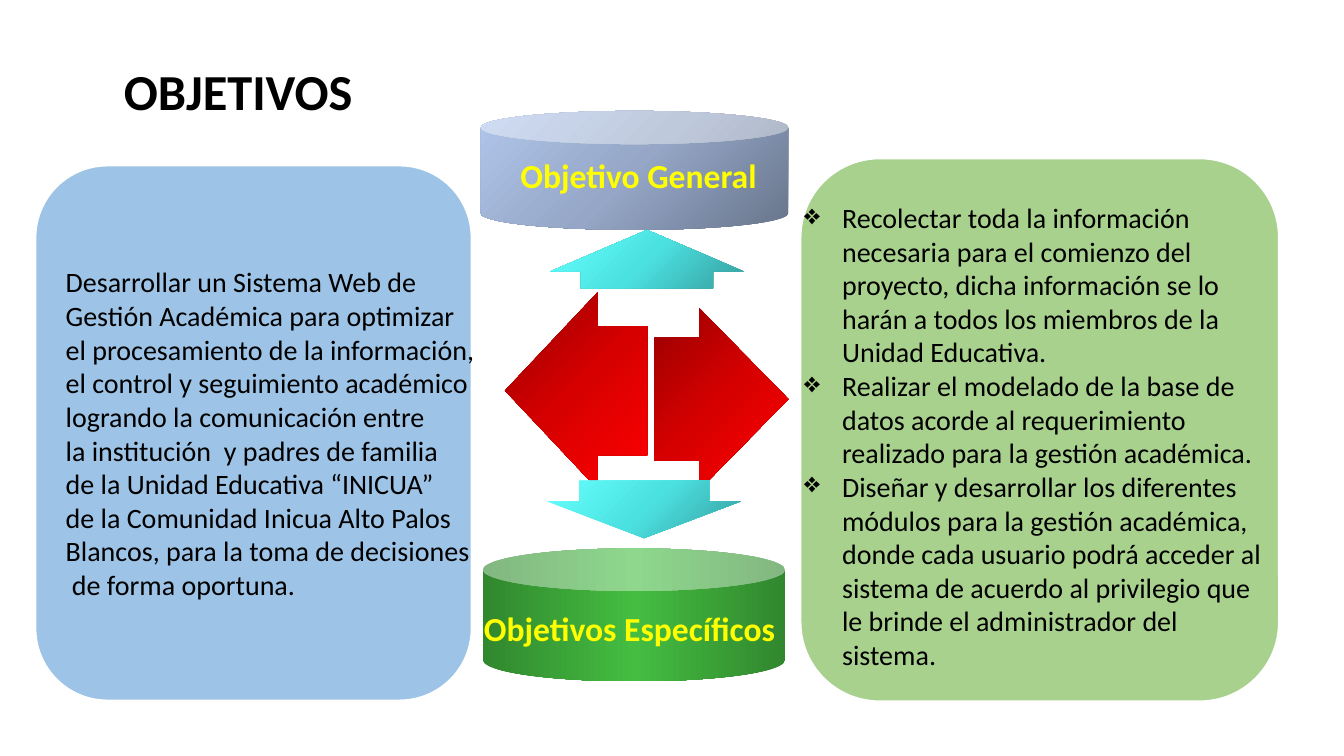
from lxml import etree
from pptx import Presentation
from pptx import util as u
from pptx.dml.color import RGBColor
from pptx.enum import shapes, text
from pptx.oxml.ns import qn

FONT = "Calibri"
COLORS = {"blue": "9DC3E6", "green": "A9D18E", "white": "FFFFFF",
          "black": "000000", "yellow": "FFFF00"}
GRADIENTS = {"red": ("970000", "D70000", "FF0000"),
             "steel": ("68758B", "95A6C6", "B0C6EB"),
             "cyan": ("369E9E", "4CE1E1", "66FFFF"),
             "leaf": ("31872E", "44BD41", "31872E")}
GENERAL = ["Desarrollar un Sistema Web de",
           "Gestión Académica para optimizar",
           "el procesamiento de la información,",
           "el control y seguimiento académico",
           "logrando la comunicación entre",
           "la institución  y padres de familia",
           "de la Unidad Educativa “INICUA”",
           "de la Comunidad Inicua Alto Palos",
           "Blancos, para la toma de decisiones",
           " de forma oportuna."]
SPECIFIC = ["Recolectar toda la información necesaria para el comienzo del proyecto, "
            "dicha información se lo harán a todos los miembros de la Unidad Educativa.",
            "Realizar el modelado de la base de datos acorde al requerimiento realizado "
            "para la gestión académica.",
            "Diseñar y desarrollar los diferentes módulos para la gestión académica, "
            "donde cada usuario podrá acceder al sistema de acuerdo al privilegio que "
            "le brinde el administrador del sistema."]


def rgb(name):
    """Return the named colour."""
    return RGBColor.from_string(COLORS[name])


def add_shape(s, kind, box, adj=()):
    """Add a preset shape without shadow or outline."""
    sp = s.shapes.add_shape(kind, *map(u.Pt, box))
    sp.shadow.inherit = False
    sp.line.fill.background()
    for i, value in enumerate(adj):
        sp.adjustments[i] = value
    return sp


def shade(sp, name, angle=None):
    """Fill a shape with a linear gradient, or a corner one if no angle is given."""
    sp.fill.gradient()
    grad = sp._element.spPr.find(qn("a:gradFill"))
    for child in list(grad):
        grad.remove(child)
    stops = etree.SubElement(grad, qn("a:gsLst"))
    for i, color in enumerate(GRADIENTS[name]):
        gs = etree.SubElement(stops, qn("a:gs"), pos=str(i * 50000))
        etree.SubElement(gs, qn("a:srgbClr"), val=color)
    if angle is None:
        way = etree.SubElement(grad, qn("a:path"), {"path": "circle"})
        etree.SubElement(way, qn("a:fillToRect"), l="100000", t="100000")
    else:
        etree.SubElement(grad, qn("a:lin"), ang=str(angle * 60000), scaled="0")


def write(tf, lines, size, color="black", bold=False, align=text.PP_ALIGN.LEFT, bullet=None):
    """Write one paragraph per line, with an optional hanging bullet."""
    tf.text = "\n".join(lines)
    for p in tf.paragraphs:
        p.alignment = align
        if bullet:
            pPr = p._p.get_or_add_pPr()
            pPr.set("marL", str(u.Pt(27)))
            pPr.set("indent", str(u.Pt(-27)))
            etree.SubElement(pPr, qn("a:buChar"), char=bullet)
        for r in p.runs:
            r.font.name = FONT
            r.font.size = u.Pt(size)
            r.font.bold = bold
            r.font.color.rgb = rgb(color)


def add_text(s, box, lines, size, **style):
    """Add a wrapping text box."""
    tf = s.shapes.add_textbox(*map(u.Pt, box)).text_frame
    tf.word_wrap = True
    write(tf, lines, size, **style)


def panel(s, box, color):
    """Add a rounded panel with a white outline."""
    sp = add_shape(s, shapes.MSO_SHAPE.ROUNDED_RECTANGLE, box, [0.167])
    sp.fill.solid()
    sp.fill.fore_color.rgb = rgb(color)
    sp.line.color.rgb = rgb("white")
    sp.line.width = u.Pt(3)
    return sp


def general_panel(s, box):
    """Add the panel of the general objective."""
    tf = panel(s, box, "blue").text_frame
    tf.word_wrap = False
    tf.vertical_anchor = text.MSO_ANCHOR.MIDDLE
    write(tf, GENERAL, 20)


def specific_panel(s, box):
    """Add the panel of the specific objectives."""
    x, y, w, h = box
    panel(s, box, "green")
    add_text(s, (x - 3.6, y + 27.4, w, h - 43.2), SPECIFIC, 20, bullet="❖")


def hub(s, x, y):
    """Add the two labelled cans and the arrows between them."""
    ms = shapes.MSO_SHAPE
    parts = [(ms.LEFT_ARROW, (23.7, 129.6, 101.5, 140.4), (0.656, 0.652), "red", 45),
             (ms.RIGHT_ARROW, (130.3, 141.1, 95.8, 129.6), (0.677, 0.662), "red", 45),
             (ms.CAN, (6.4, 0, 219.6, 85), (0.279,), "steel", 225),
             (ms.UP_ARROW, (56.1, 85, 138.2, 41.8), (0.684, 0.708), "cyan", 225),
             (ms.CAN, (7.9, 312.5, 216, 95), (0.32,), "leaf", 0),
             (ms.DOWN_ARROW, (54, 264.2, 138.2, 41), (0.671, 0.641), "cyan", None)]
    for kind, (dx, dy, w, h), adj, name, angle in parts:
        shade(add_shape(s, kind, (x + dx, y + dy, w, h), adj), name, angle)
    for dx, dy, label in [(6.4, 28.1, "Objetivo General"), (0, 351.4, "Objetivos Específicos")]:
        add_text(s, (x + dx, y + dy, 225.4, 36), [label], 24, color="yellow",
                 bold=True, align=text.PP_ALIGN.CENTER)


def main():
    """Build and save the slide."""
    prs = Presentation()
    prs.slide_width, prs.slide_height = u.Pt(960), u.Pt(540)
    s = prs.slides.add_slide(prs.slide_layouts[6])
    general_panel(s, (24.5, 117.4, 313.2, 383.8))
    specific_panel(s, (571, 112.3, 343.4, 389.5))
    hub(s, 337, 79.2)
    add_text(s, (81.4, 39.6, 256.3, 51.1), ["OBJETIVOS"], 36, bold=True)
    prs.save("out.pptx")


if __name__ == "__main__":
    main()
